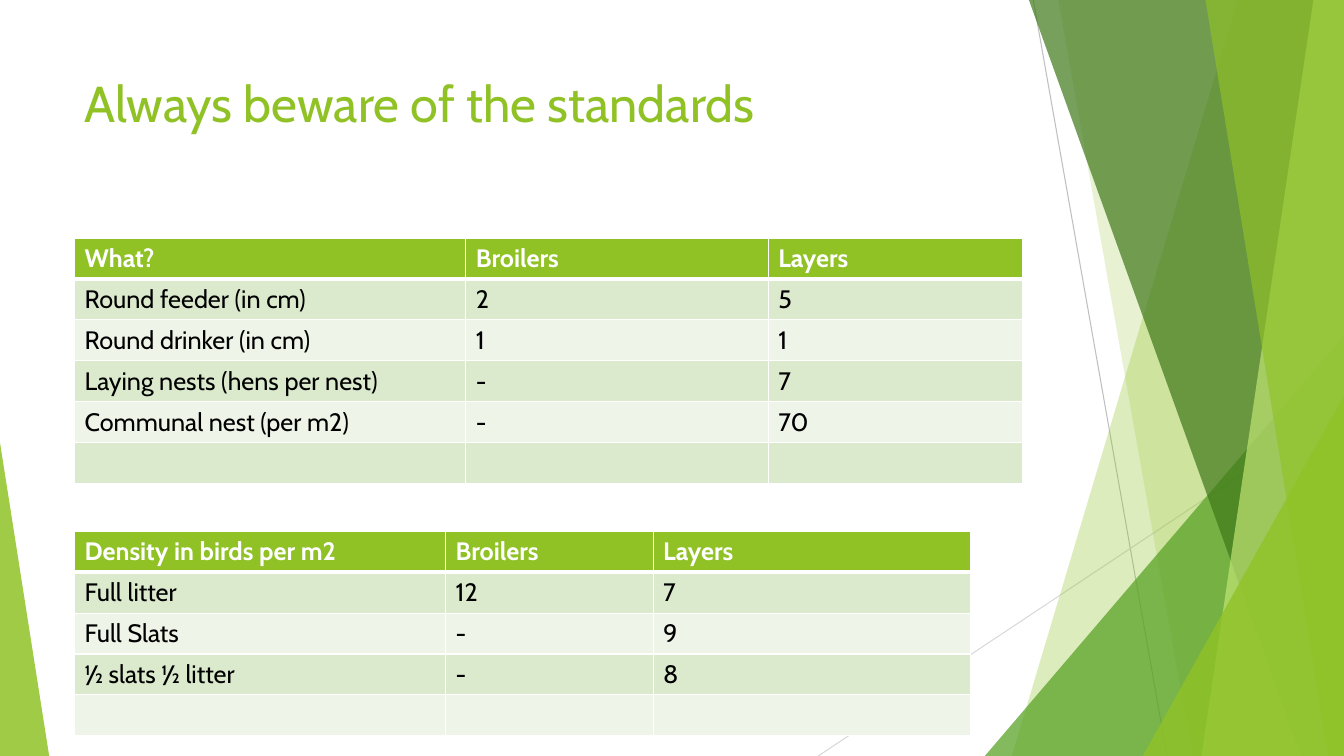
import dataclasses

import lxml.etree
import pptx
import pptx.dml.color
import pptx.enum.shapes
import pptx.enum.text
import pptx.oxml.ns
import pptx.util

Cm = pptx.util.Cm
Pt = pptx.util.Pt
qn = pptx.oxml.ns.qn
rgb = pptx.dml.color.RGBColor.from_string

WIDTH, HEIGHT = 33.87, 19.05
LEFT = 1.88
ROW_HEIGHT = 1.03


@dataclasses.dataclass(frozen=True)
class Theme:
    font: str = "Cabin"
    title_size: float = 36
    body_size: float = 18
    lime: str = "90C226"
    green: str = "54A021"
    forest: str = "3F7819"
    pale_lime: str = "C0E474"
    grey: str = "BFBFBF"
    light_grey: str = "D9D9D9"
    white: str = "FFFFFF"
    black: str = "000000"
    bands: tuple = ("DBE9CD", "EEF4E8")


class SlideBuilder:
    def __init__(self, slide, theme):
        self.shapes = slide.shapes
        self.theme = theme

    def style_run(self, r, size, color, bold=False):
        r.font.name = self.theme.font
        r.font.size = Pt(size)
        r.font.bold = bold
        r.font.color.rgb = rgb(color)

    def fill(self, sp, color, opacity):
        """Fill without outline or shadow; opacity is in percent."""
        sp.shadow.inherit = False
        sp.line.fill.background()
        sp.fill.solid()
        sp.fill.fore_color.rgb = rgb(color)
        clr = sp.fill._xPr.find(qn("a:solidFill"))[0]
        lxml.etree.SubElement(clr, qn("a:alpha"), val=str(opacity * 1000))

    def line(self, x1, y1, x2, y2, color):
        cxn = self.shapes.add_connector(
            pptx.enum.shapes.MSO_CONNECTOR.STRAIGHT, Cm(x1), Cm(y1), Cm(x2), Cm(y2))
        cxn.line.color.rgb = rgb(color)
        cxn.line.width = Pt(0.75)
        lxml.etree.SubElement(cxn._element.spPr, qn("a:effectLst"))

    def edge_panel(self, top_x, bottom_x, color, opacity):
        """Full-height panel with a slanted left side, reaching the right edge."""
        corners = [(top_x, 0), (WIDTH, 0), (WIDTH, HEIGHT), (bottom_x, HEIGHT)]
        points = [(Cm(x), Cm(y)) for x, y in corners]
        builder = self.shapes.build_freeform(*points[0])
        builder.add_line_segments(points[1:], close=True)
        self.fill(builder.convert_to_shape(), color, opacity)

    def corner_triangle(self, x, y, w, apex, color, opacity):
        """Right triangle standing on the bottom edge; apex 0 is left, 1 right."""
        sp = self.shapes.add_shape(
            pptx.enum.shapes.MSO_SHAPE.ISOSCELES_TRIANGLE,
            Cm(x), Cm(y), Cm(w), Cm(HEIGHT - y))
        sp.adjustments[0] = apex
        self.fill(sp, color, opacity)

    def title(self, text, x, y, w, h):
        tf = self.shapes.add_textbox(Cm(x), Cm(y), Cm(w), Cm(h)).text_frame
        tf.word_wrap = True
        tf.vertical_anchor = pptx.enum.text.MSO_ANCHOR.TOP
        tf.text = text
        self.style_run(tf.paragraphs[0].runs[0], self.theme.title_size, self.theme.lime)

    def border(self, cell, side, width):
        ln = lxml.etree.SubElement(
            cell._tc.get_or_add_tcPr(), qn(f"a:ln{side}"), w=str(Pt(width)))
        solid = lxml.etree.SubElement(ln, qn("a:solidFill"))
        lxml.etree.SubElement(solid, qn("a:srgbClr"), val=self.theme.white)

    def table(self, x, y, col_widths, rows):
        """Table with a header row and alternating body bands."""
        t = self.theme
        table = self.shapes.add_table(
            len(rows), len(col_widths), Cm(x), Cm(y),
            Cm(sum(col_widths)), Cm(ROW_HEIGHT * len(rows))).table
        table.first_row = table.horz_banding = False
        for col, width in zip(table.columns, col_widths):
            col.width = Cm(width)
        for i, (row, texts) in enumerate(zip(table.rows, rows)):
            row.height = Cm(ROW_HEIGHT)
            header = i == 0
            widths = {"L": 1, "R": 1, "T": 3 if i == 1 else 1, "B": 3 if header else 1}
            for cell, text in zip(row.cells, texts):
                for side, width in widths.items():
                    self.border(cell, side, width)
                cell.fill.solid()
                cell.fill.fore_color.rgb = rgb(t.lime if header else t.bands[(i - 1) % 2])
                cell.text = text
                for r in cell.text_frame.paragraphs[0].runs:
                    self.style_run(r, t.body_size, t.white if header else t.black, header)


def main():
    prs = pptx.Presentation()
    prs.slide_width, prs.slide_height = Cm(WIDTH), Cm(HEIGHT)
    theme = Theme()
    s = SlideBuilder(prs.slides.add_slide(prs.slide_layouts[6]), theme)

    s.line(26.04, 0, 29.41, HEIGHT, theme.grey)
    s.line(WIDTH, 10.24, 20.62, HEIGHT, theme.light_grey)
    s.edge_panel(31.19, 25.5, theme.lime, 30)
    s.edge_panel(26.67, 30.05, theme.lime, 20)
    s.corner_triangle(24.82, 8.46, WIDTH - 24.82, 1, theme.green, 72)
    s.edge_panel(25.93, 32.79, theme.forest, 70)
    s.edge_panel(33.1, 30.28, theme.pale_lime, 70)
    s.edge_panel(30.38, 33.48, theme.lime, 65)
    s.corner_triangle(28.8, 9.98, WIDTH - 28.8, 1, theme.lime, 80)
    s.corner_triangle(0, 11.15, 1.24, 0, theme.lime, 85)

    s.title("Always beware of the standards", LEFT, 1.7, 23.88, 3.66)
    s.table(LEFT, 6, [9.86, 7.62, 6.4], [
        ("What?", "Broilers", "Layers"),
        ("Round feeder (in cm)", "2", "5"),
        ("Round drinker (in cm)", "1", "1"),
        ("Laying nests (hens per nest)", "-", "7"),
        ("Communal nest (per m2)", "-", "70"),
        ("", "", ""),
    ])
    s.table(LEFT, 13.39, [9.35, 5.23, 8], [
        ("Density in birds per m2", "Broilers", "Layers"),
        ("Full litter", "12", "7"),
        ("Full Slats", "-", "9"),
        ("½ slats ½ litter", "-", "8"),
        ("", "", ""),
    ])
    prs.save("out.pptx")


if __name__ == "__main__":
    main()
